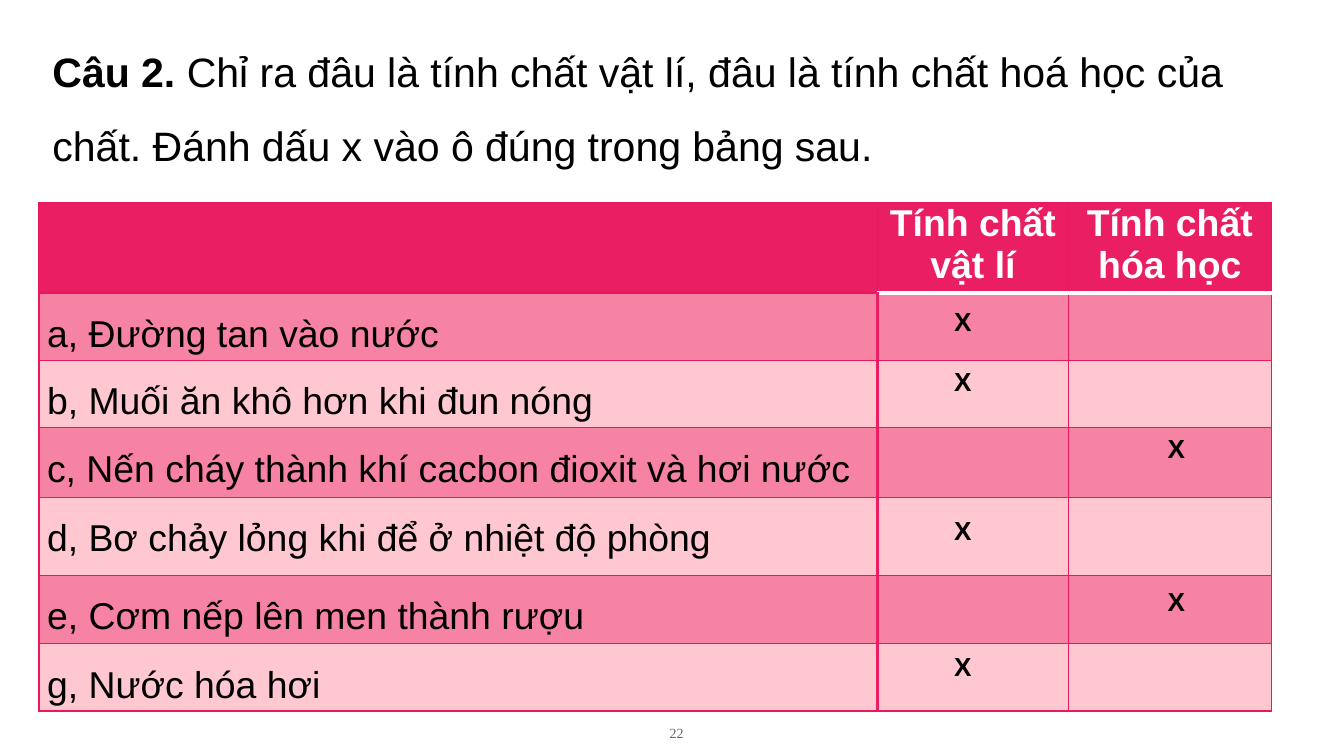
import pptx
import pptx.util
import pptx.dml.color
import pptx.enum.text
import pptx.oxml
import pptx.oxml.ns
from dataclasses import dataclass

Inches = pptx.util.Inches
Pt = pptx.util.Pt
PP_ALIGN = pptx.enum.text.PP_ALIGN
ANCHOR = pptx.enum.text.MSO_ANCHOR
AUTO_SIZE = pptx.enum.text.MSO_AUTO_SIZE


@dataclass(frozen=True)
class Theme:
    font: str = "Arial"
    number_font: str = "Times New Roman"
    ink: str = "000000"
    paper: str = "FFFFFF"
    muted: str = "666666"
    header: str = "E91E63"
    band_dark: str = "F783A4"
    band_light: str = "FFC7D0"
    rule: str = "E9185F"
    question_size: float = 22
    table_size: float = 20
    mark_size: float = 14
    number_size: float = 7.5
    thin: float = 0.75
    thick: float = 2


THEME = Theme()
COLUMNS = (6.24, 1.42, 1.51)
HEADINGS = ("", "Tính chất vật lí", "Tính chất hóa học")
HEADER_HEIGHT = 0.67
# Statement, row height, column of the answer, top of its mark within the table
STATEMENTS = (
    ("a, Đường tan vào nước", 0.5, 1, 0.71),
    ("b, Muối ăn khô hơn khi đun nóng", 0.5, 1, 1.16),
    ("c, Nến cháy thành khí cacbon đioxit và hơi nước", 0.52, 2, 1.66),
    ("d, Bơ chảy lỏng khi để ở nhiệt độ phòng", 0.58, 1, 2.27),
    ("e, Cơm nếp lên men thành rượu", 0.51, 2, 2.8),
    ("g, Nước hóa hơi", 0.5, 1, 3.28),
)
MARK_LEFT = {1: 6.71, 2: 8.3}


def rgb(value):
    return pptx.dml.color.RGBColor.from_string(value)


def write(paragraph, text, size, color=THEME.ink, bold=False, font=THEME.font, **layout):
    """Add a run, and set the paragraph attributes given in layout."""
    run = paragraph.add_run()
    run.text = text
    formats = {"name": font, "size": Pt(size), "bold": bold}
    for name, value in formats.items():
        setattr(run.font, name, value)
    run.font.color.rgb = rgb(color)
    for name, value in layout.items():
        setattr(paragraph, name, value)


def set_borders(cell, **sides):
    """Draw the sides L, R, T and B, each given as (colour, width)."""
    properties = cell._tc.get_or_add_tcPr()
    for position, side in enumerate("LRTB"):
        color, width = sides[side]
        properties.insert(position, pptx.oxml.parse_xml(
            f'<a:ln{side} {pptx.oxml.ns.nsdecls("a")} w="{Pt(width)}">'
            f'<a:solidFill><a:srgbClr val="{color}"/></a:solidFill></a:ln{side}>'))


def add_question(slide, box):
    title = slide.shapes.title
    title.left, title.top, title.width, title.height = map(Inches, box)
    frame = title.text_frame
    frame.word_wrap = True
    frame.auto_size = AUTO_SIZE.SHAPE_TO_FIT_TEXT
    frame.vertical_anchor = ANCHOR.MIDDLE
    paragraph = frame.paragraphs[0]
    write(paragraph, "Câu 2. ", THEME.question_size, bold=True,
          alignment=PP_ALIGN.LEFT, line_spacing=1.5)
    write(paragraph, "Chỉ ra đâu là tính chất vật lí, đâu là tính chất hoá học của chất. "
          "Đánh dấu x vào ô đúng trong bảng sau.", THEME.question_size)


def style_cell(cell, row, column):
    header = row == 0
    if header:
        fill = THEME.header
    else:
        fill = THEME.band_dark if row % 2 else THEME.band_light
    cell.fill.solid()
    cell.fill.fore_color.rgb = rgb(fill)
    cell.margin_left = cell.margin_right = Inches(0.06)
    cell.margin_top = cell.margin_bottom = 0

    thin = (THEME.rule, THEME.thin)
    divider = (THEME.header, THEME.thick)
    underline = (THEME.paper, THEME.thick)
    set_borders(
        cell,
        L=divider if column == 1 and not header else thin,
        R=divider if column == 0 and not header else thin,
        T=underline if row == 1 and column else thin,
        B=underline if header and column else thin,
    )


def add_answer_table(slide, box):
    rows = [HEADINGS] + [(statement, "", "") for statement, *_ in STATEMENTS]
    heights = [HEADER_HEIGHT] + [height for _, height, *_ in STATEMENTS]
    table = slide.shapes.add_table(len(rows), len(COLUMNS), *map(Inches, box)).table
    for column, width in zip(table.columns, COLUMNS):
        column.width = Inches(width)
    for row, height in zip(table.rows, heights):
        row.height = Inches(height)

    spacing = {"space_before": Pt(6), "space_after": Pt(6)}
    heading = {"color": THEME.paper, "bold": True, "alignment": PP_ALIGN.CENTER}
    statement = {"line_spacing": 1.5}
    for r, texts in enumerate(rows):
        for c, text in enumerate(texts):
            cell = table.cell(r, c)
            style_cell(cell, r, c)
            if text:
                write(cell.text_frame.paragraphs[0], text, THEME.table_size,
                      **spacing, **(statement if r else heading))


def add_marks(slide, box):
    left, top, *_ = box
    for _, _, column, offset in STATEMENTS:
        mark = slide.shapes.add_textbox(
            Inches(left + MARK_LEFT[column]), Inches(top + offset), Inches(0.61), Inches(0.34))
        mark.text_frame.word_wrap = True
        mark.text_frame.auto_size = AUTO_SIZE.SHAPE_TO_FIT_TEXT
        write(mark.text_frame.paragraphs[0], "X", THEME.mark_size, bold=True)


def add_page_number(slide, box):
    number = slide.shapes.add_textbox(*map(Inches, box))
    number.text_frame.word_wrap = True
    write(number.text_frame.paragraphs[0], "22", THEME.number_size, THEME.muted,
          font=THEME.number_font, alignment=PP_ALIGN.CENTER)


def main():
    deck = pptx.Presentation()
    deck.slide_width = Inches(10)
    deck.slide_height = deck.slide_width * 9 // 16
    slide = deck.slides.add_slide(deck.slide_layouts[5])
    slide.background.fill.solid()
    slide.background.fill.fore_color.rgb = rgb(THEME.paper)

    table_box = (0.29, 1.51, sum(COLUMNS), 3.78)
    add_page_number(slide, (4.69, 5.34, 0.69, 0.21))
    add_question(slide, (0.29, 0.11, 9.17, 1.21))
    add_answer_table(slide, table_box)
    add_marks(slide, table_box)
    deck.save("out.pptx")


if __name__ == "__main__":
    main()
